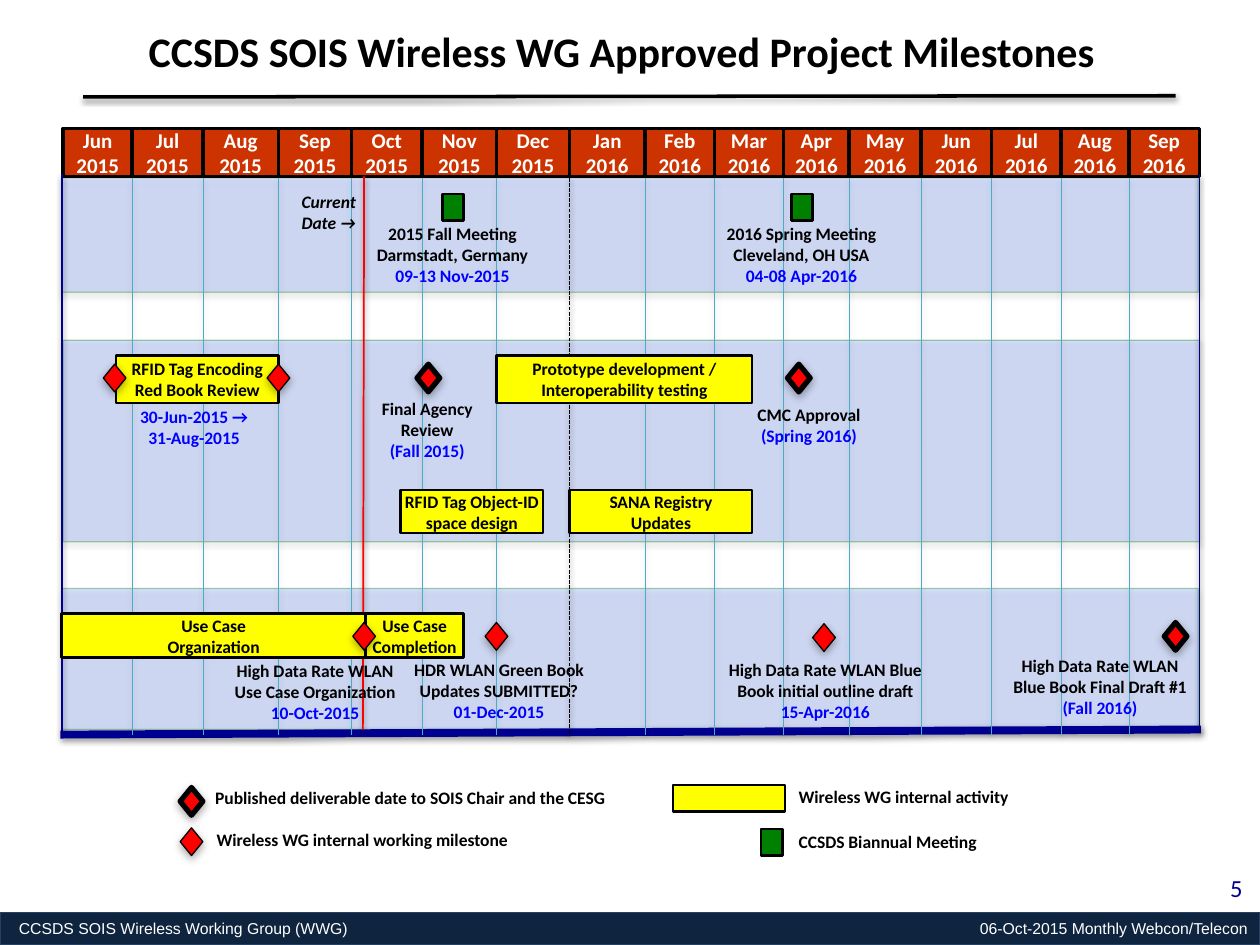
"""Build the wireless working group milestone timeline slide."""
from dataclasses import dataclass

from lxml import etree
from pptx import Presentation
from pptx.dml.color import RGBColor
from pptx.enum.dml import MSO_LINE
from pptx.enum.shapes import MSO_CONNECTOR, MSO_SHAPE
from pptx.enum.text import MSO_ANCHOR, MSO_AUTO_SIZE, PP_ALIGN
from pptx.oxml.ns import qn
from pptx.util import Inches, Pt

RECTANGLE, DIAMOND = MSO_SHAPE.RECTANGLE, MSO_SHAPE.DIAMOND
STRAIGHT = MSO_CONNECTOR.STRAIGHT
DOTTED, DASHED = MSO_LINE.ROUND_DOT, MSO_LINE.SQUARE_DOT
TOP, MIDDLE = MSO_ANCHOR.TOP, MSO_ANCHOR.MIDDLE
LEFT, CENTER, RIGHT = PP_ALIGN.LEFT, PP_ALIGN.CENTER, PP_ALIGN.RIGHT
NO_AUTOFIT = MSO_AUTO_SIZE.NONE


@dataclass(frozen=True)
class Theme:
    font: str = "Calibri"
    footer_font: str = "Arial"
    title_size: int = 24
    number_size: int = 14
    month_size: int = 12
    body_size: int = 10
    footer_size: int = 9
    ink: str = "000000"
    paper: str = "FFFFFF"
    date: str = "0000FF"
    month: str = "CC3300"
    activity: str = "FFFF00"
    milestone: str = "FF0000"
    meeting: str = "008000"
    band: str = "3366FF"
    frame: str = "000090"
    grid: str = "4BACC6"
    footer: str = "0F243E"
    footer_line: str = "254061"


class Timeline:
    def __init__(self, slide, theme):
        self.slide = slide
        self.theme = theme

    def shadow(self, shape, blur, distance, alpha):
        properties = shape._element.spPr
        effects = properties.find(qn("a:effectLst"))
        if effects is None:
            effects = etree.SubElement(properties, qn("a:effectLst"))
        outer = etree.SubElement(effects, qn("a:outerShdw"), blurRad=str(Pt(blur)),
                                 dist=str(Pt(distance)), dir="5400000", rotWithShape="0")
        color = etree.SubElement(outer, qn("a:srgbClr"), val=self.theme.ink)
        etree.SubElement(color, qn("a:alpha"), val=str(alpha * 1000))

    def add_lines(self, shape, lines, size, color, align=CENTER, anchor=TOP, wrap=True,
                  font=None, bold=True, italic=False, last_color=None):
        frame = shape.text_frame
        frame.auto_size = NO_AUTOFIT
        frame.word_wrap = wrap
        frame.vertical_anchor = anchor
        for index, line in enumerate(lines):
            paragraph = frame.paragraphs[0] if index == 0 else frame.add_paragraph()
            paragraph.alignment = align
            run = paragraph.add_run()
            run.text = line
            run.font.name = font or self.theme.font
            run.font.size = Pt(size)
            run.font.bold = bold
            run.font.italic = italic
            is_last = index == len(lines) - 1
            run.font.color.rgb = RGBColor.from_string(last_color if is_last and last_color else color)

    def title(self, box, text):
        title = self.slide.shapes.title
        title.left, title.top, title.width, title.height = map(Inches, box)
        self.add_lines(title, [text], self.theme.title_size, self.theme.ink, LEFT, wrap=False)

    def text(self, box, lines, size=None, color=None, **style):
        shape = self.slide.shapes.add_textbox(*map(Inches, box))
        self.add_lines(shape, lines, size or self.theme.body_size, color or self.theme.ink, **style)

    def caption(self, box, lines):
        self.text(box, lines, last_color=self.theme.date)

    def shape(self, kind, box, fill, line, width):
        shape = self.slide.shapes.add_shape(kind, *map(Inches, box))
        shape.shadow.inherit = False
        shape.fill.solid()
        shape.fill.fore_color.rgb = RGBColor.from_string(fill)
        shape.line.color.rgb = RGBColor.from_string(line)
        shape.line.width = Pt(width)
        return shape

    def line(self, start, end, color, width, dash=None):
        connector = self.slide.shapes.add_connector(STRAIGHT, *map(Inches, start + end))
        connector.line.color.rgb = RGBColor.from_string(color)
        connector.line.width = Pt(width)
        if dash:
            connector.line.dash_style = dash
        self.shadow(connector, 3.1, 1.6, 38)

    def band(self, left, top, height):
        band = self.shape(RECTANGLE, (left, top, 9.02, height), self.theme.band, self.theme.meeting, 0.75)
        colors = band._element.spPr.iter(qn("a:srgbClr"))
        for color, alpha in zip(list(colors), (18, 33)):
            etree.SubElement(color, qn("a:alpha"), val=str(alpha * 1000))
        self.shadow(band, 3.1, 1.8, 35)

    def month(self, left, right, name, year):
        cell = self.shape(RECTANGLE, (left, 1.02, right - left, 0.38), self.theme.month, self.theme.ink, 2)
        self.add_lines(cell, [name, year], self.theme.month_size, self.theme.paper, anchor=MIDDLE, wrap=False)

    def activity(self, box, lines=()):
        bar = self.shape(RECTANGLE, box, self.theme.activity, self.theme.ink, 1.5)
        self.add_lines(bar, lines, self.theme.body_size, self.theme.ink, anchor=MIDDLE, wrap=False)

    def milestone(self, left, top, published=False):
        diamond = self.shape(DIAMOND, (left, top, 0.18, 0.22), self.theme.milestone,
                             self.theme.ink, 3 if published else 0.75)
        self.shadow(diamond, 5, 1.8, 35)

    def meeting(self, left, top):
        self.shape(RECTANGLE, (left, top, 0.17, 0.21), self.theme.meeting, self.theme.ink, 1.5)

    def footer(self, group, event):
        box = (0, 7.24, 10, 0.26)
        style = dict(size=self.theme.footer_size, color=self.theme.paper, anchor=MIDDLE,
                     font=self.theme.footer_font, bold=False)
        bar = self.shape(RECTANGLE, box, self.theme.footer, self.theme.footer_line, 0.75)
        bar.text_frame.margin_left = Inches(0.15)
        self.add_lines(bar, [group], align=LEFT, **style)
        self.text(box, [event], align=RIGHT, **style)


MONTHS = "Jun Jul Aug Sep Oct Nov Dec Jan Feb Mar Apr May Jun Jul Aug Sep".split()
MONTH_EDGES = [0.5, 1.05, 1.61, 2.21, 2.79, 3.35, 3.94, 4.52, 5.12,
               5.67, 6.22, 6.74, 7.31, 7.87, 8.42, 8.96, 9.52]
NEW_YEAR = MONTHS.index("Jan")
BANDS = [(0.5, 2.7, 1.6), (0.49, 4.67, 1.12), (0.49, 1.41, 0.91)]
ACTIVITIES = [
    ((0.92, 2.82, 1.29, 0.38), ["RFID Tag Encoding", "Red Book Review"]),
    ((3.94, 2.82, 2.03, 0.38), ["Prototype development /", "Interoperability testing"]),
    ((3.18, 3.89, 1.13, 0.34), ["RFID Tag Object-ID", "space design"]),
    ((4.52, 3.89, 1.45, 0.34), ["SANA Registry", "Updates"]),
    ((0.49, 4.87, 2.41, 0.35), ["Use Case", "Organization"]),
    ((2.9, 4.87, 0.78, 0.35), ["Use Case", "Completion"]),
    ((5.34, 6.23, 0.89, 0.21), []),
]
MEETINGS = [(3.51, 1.54), (6.28, 1.54), (6.04, 6.58)]
WORKING = [(0.82, 2.89), (2.12, 2.89), (2.8, 4.94), (3.85, 4.94), (6.45, 4.95), (1.43, 6.57)]
PUBLISHED = [(3.31, 2.89), (6.25, 2.89), (9.24, 4.94), (1.43, 6.25)]
CAPTIONS = [
    ((2.88, 1.72, 1.42, 0.61), ["2015 Fall Meeting", "Darmstadt, Germany", "09-13 Nov-2015"]),
    ((5.65, 1.72, 1.42, 0.61), ["2016 Spring Meeting", "Cleveland, OH USA", "04-08 Apr-2016"]),
    ((2.73, 3.11, 1.32, 0.61), ["Final Agency Review", "(Fall 2015)"]),
    ((5.76, 3.16, 1.32, 0.44), ["CMC Approval", "(Spring 2016)"]),
    ((1.74, 5.19, 1.52, 0.61), ["High Data Rate WLAN", "Use Case Organization", "10-Oct-2015"]),
    ((3.16, 5.18, 1.6, 0.61), ["HDR WLAN Green Book Updates SUBMITTED?", "01-Dec-2015"]),
    ((5.53, 5.18, 2.04, 0.61), ["High Data Rate WLAN Blue Book initial outline draft", "15-Apr-2016"]),
    ((7.86, 5.15, 1.74, 0.61), ["High Data Rate WLAN", "Blue Book Final Draft #1", "(Fall 2016)"]),
]
LEGEND = [
    ((1.61, 6.2, 3.76, 0.27), "Published deliverable date to SOIS Chair and the CESG"),
    ((1.62, 6.53, 2.65, 0.27), "Wireless WG internal working milestone"),
    ((6.24, 6.19, 1.89, 0.27), "Wireless WG internal activity"),
    ((6.24, 6.55, 1.89, 0.27), "CCSDS Biannual Meeting"),
]


def main():
    theme = Theme()
    presentation = Presentation()
    presentation.slide_width, presentation.slide_height = Inches(10), Inches(7.5)
    slide = presentation.slides.add_slide(presentation.slide_layouts[5])
    timeline = Timeline(slide, theme)
    timeline.title((1.08, 0.15, 7.81, 0.5), "CCSDS SOIS Wireless WG Approved Project Milestones")
    timeline.line((0.66, 0.77), (9.33, 0.76), theme.ink, 2)
    timeline.footer("CCSDS SOIS Wireless Working Group (WWG)", "06-Oct-2015 Monthly Webcon/Telecon")
    timeline.text((9.3, 6.88, 0.66, 0.35), ["5"], theme.number_size, theme.frame, align=RIGHT, bold=False)

    for band in BANDS:
        timeline.band(*band)
    timeline.line((0.48, 5.83), (9.53, 5.79), theme.frame, 4.5)
    for index, name in enumerate(MONTHS):
        year = "2015" if index < NEW_YEAR else "2016"
        timeline.month(MONTH_EDGES[index], MONTH_EDGES[index + 1], name, year)
    for index, edge in enumerate(MONTH_EDGES[1:-1], start=1):
        style = (theme.ink, 0.75, DASHED) if index == NEW_YEAR else (theme.grid, 0.25, DOTTED)
        timeline.line((edge, 1.41), (edge, 5.83), *style)
    for edge in (0.49, 9.52):
        timeline.line((edge, 1.38), (edge, 5.8), theme.frame, 1)
    timeline.line((2.89, 1.4), (2.88, 5.79), theme.milestone, 1)
    timeline.text((2.21, 1.47, 0.8, 0.44), ["Current", "Date →"], italic=True)

    for box, lines in ACTIVITIES:
        timeline.activity(box, lines)
    for position in MEETINGS:
        timeline.meeting(*position)
    for position in WORKING:
        timeline.milestone(*position)
    for position in PUBLISHED:
        timeline.milestone(*position, published=True)
    for box, lines in CAPTIONS:
        timeline.caption(box, lines)
    timeline.text((0.89, 3.17, 1.3, 0.44), ["30-Jun-2015 →", "31-Aug-2015"], color=theme.date)
    for box, label in LEGEND:
        timeline.text(box, [label], align=LEFT)
    presentation.save("out.pptx")


if __name__ == "__main__":
    main()
